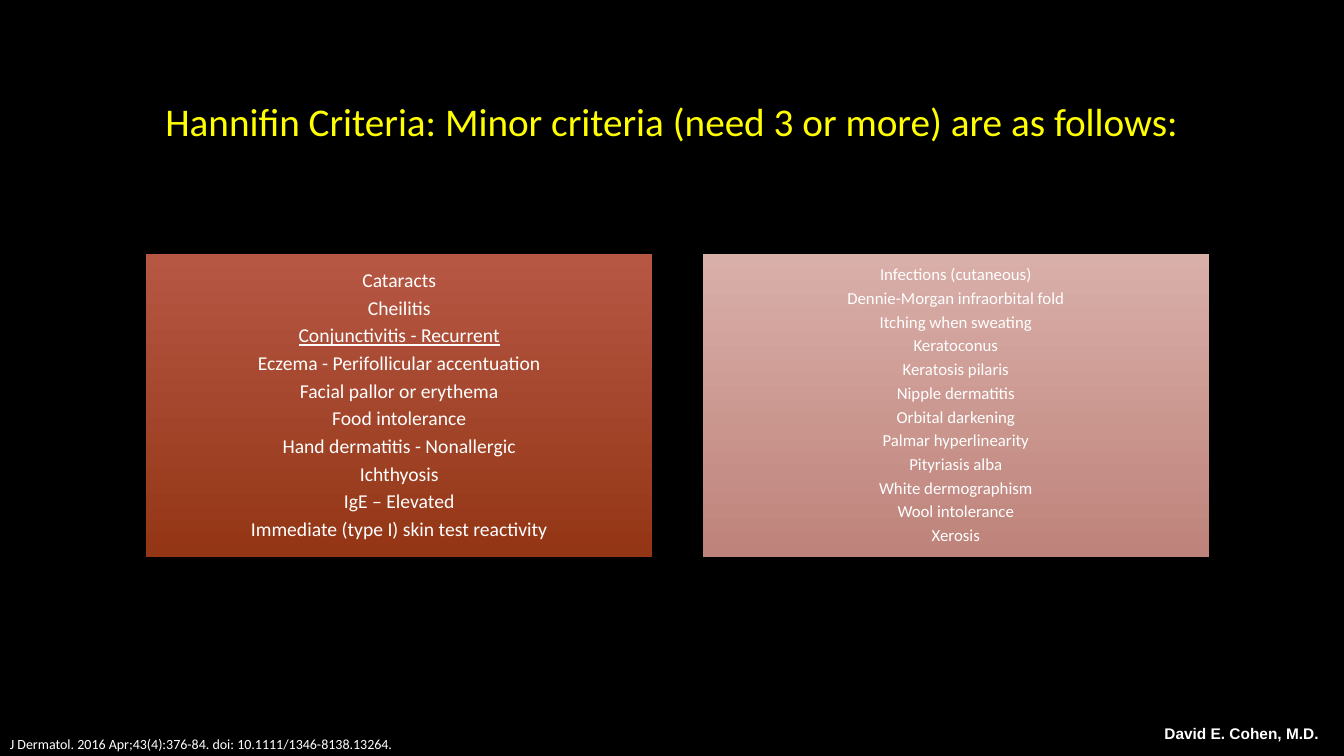
from lxml.etree import SubElement
from pptx import Presentation
from pptx.dml.color import RGBColor
from pptx.enum.text import MSO_ANCHOR, MSO_AUTO_SIZE, PP_ALIGN
from pptx.oxml.ns import qn
from pptx.util import Pt

PX = 9144  # 100 px to the inch

LEFT = [
    "Cataracts",
    "Cheilitis",
    "Conjunctivitis - Recurrent",
    "Eczema - Perifollicular accentuation",
    "Facial pallor or erythema",
    "Food intolerance",
    "Hand dermatitis - Nonallergic",
    "Ichthyosis",
    "IgE – Elevated",
    "Immediate (type I) skin test reactivity",
]
RIGHT = [
    "Infections (cutaneous)",
    "Dennie-Morgan infraorbital fold",
    "Itching when sweating",
    "Keratoconus",
    "Keratosis pilaris",
    "Nipple dermatitis",
    "Orbital darkening",
    "Palmar hyperlinearity",
    "Pityriasis alba",
    "White dermographism",
    "Wool intolerance",
    "Xerosis",
]
MARKED = "Conjunctivitis - Recurrent"


def color(code):
    return RGBColor.from_string(code)


def place(shape, box):
    shape.left, shape.top, shape.width, shape.height = (n * PX for n in box)


def style(para, size, code="FFFFFF", name="Calibri", bold=False):
    for run in para.runs:
        font = run.font
        font.size, font.name, font.bold = Pt(size), name, bold
        font.color.rgb = color(code)


def title(shape, box, text):
    place(shape, box)
    frame = shape.text_frame
    frame.text = text
    frame.auto_size = MSO_AUTO_SIZE.NONE
    frame.vertical_anchor = MSO_ANCHOR.MIDDLE
    para = frame.paragraphs[0]
    para.alignment = PP_ALIGN.CENTER
    style(para, 28, "FFFF00")


def panel(shape, box, items, size, inset, shades):
    """Fill a body placeholder with a centred list on a vertical gradient."""
    place(shape, box)
    shape.fill.gradient()
    shape.fill.gradient_angle = 270
    for stop, shade, spot in zip(shape.fill.gradient_stops, shades, (0, 1)):
        stop.color.rgb, stop.position = color(shade), spot
    frame = shape.text_frame
    frame.text = "\n".join(items)
    frame.auto_size = MSO_AUTO_SIZE.NONE
    frame.vertical_anchor = MSO_ANCHOR.MIDDLE
    frame.margin_left = frame.margin_right = inset * PX
    frame.margin_top = frame.margin_bottom = inset * PX
    for para in frame.paragraphs:
        props = para._p.get_or_add_pPr()
        props.set("marL", "0")
        props.set("indent", "0")
        SubElement(props, qn("a:buNone"))
        para.alignment = PP_ALIGN.CENTER
        para.line_spacing = 0.9
        para.space_before = Pt(0)
        para.space_after = Pt(round(size * 0.33, 1))
        style(para, size)
        if para.text == MARKED:
            para.runs[0].font.underline = True


def note(slide, box, text, size, wrap=True, **look):
    shape = slide.shapes.add_textbox(*(n * PX for n in box))
    frame = shape.text_frame
    frame.text = text
    frame.word_wrap = wrap
    style(frame.paragraphs[0], size, **look)


def criteria(deck):
    slide = deck.slides.add_slide(deck.slide_layouts[3])
    back = slide.background.fill
    back.solid()
    back.fore_color.rgb = color("000000")
    head, left, right = slide.placeholders
    title(head, (100, 67, 1132, 106),
          "Hannifin Criteria: Minor criteria (need 3 or more) are as follows:")
    panel(left, (145, 252, 502, 301), LEFT, 14, 6, ("B65744", "933615"))
    panel(right, (697, 252, 502, 301), RIGHT, 12, 5, ("D9AFA9", "BE837A"))
    note(slide, (0, 725, 1114, 25),
         "J Dermatol. 2016 Apr;43(4):376-84. doi: 10.1111/1346-8138.13264.", 10)
    note(slide, (1145, 713, 178, 29), "David E. Cohen, M.D.", 11,
         wrap=False, name="Arial", bold=True)


def main():
    deck = Presentation()
    deck.slide_width, deck.slide_height = 1333 * PX, 750 * PX
    criteria(deck)
    deck.save("out.pptx")


if __name__ == "__main__":
    main()
